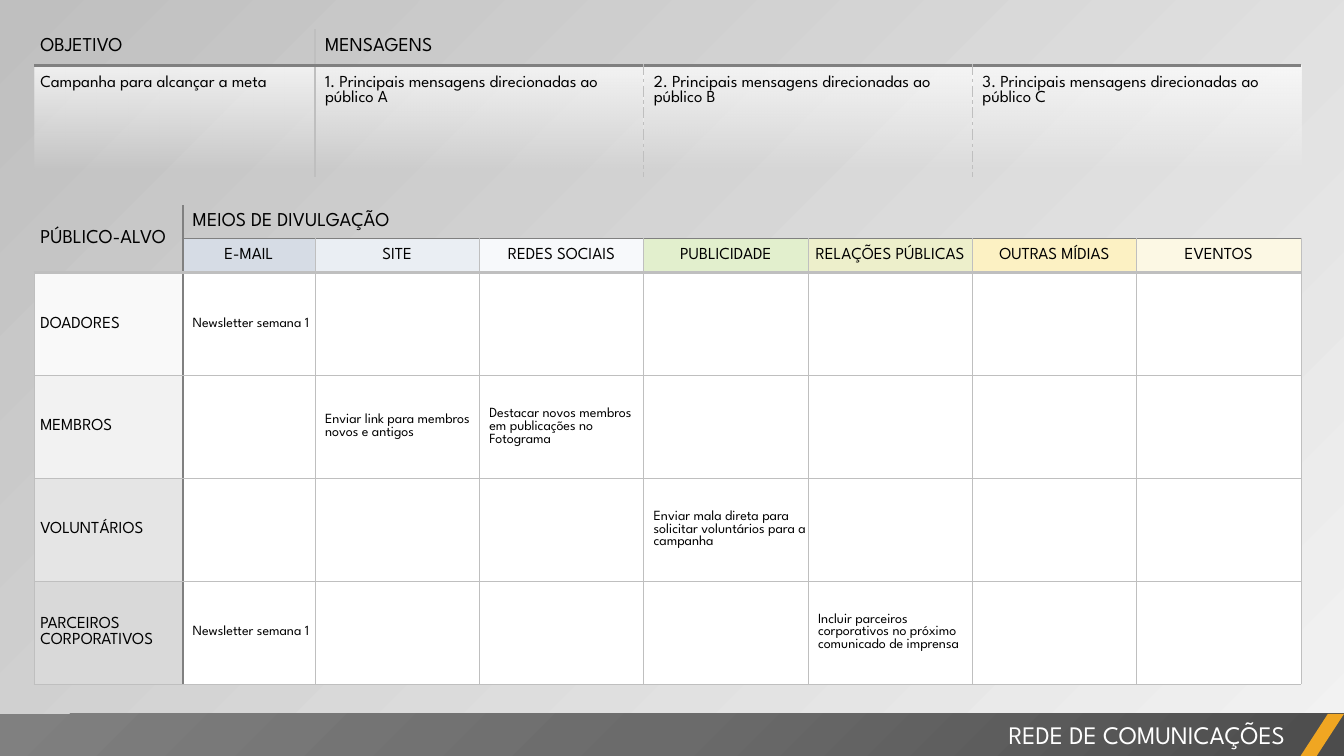
"""Build a one-slide communications planning grid."""
from lxml import etree
from pptx import Presentation
from pptx.dml.color import RGBColor
from pptx.enum import shapes, text
from pptx.oxml import ns
from pptx.util import Pt

FONT = "League Spartan"
BLACK = RGBColor(0x00, 0x00, 0x00)
WHITE = RGBColor(0xFF, 0xFF, 0xFF)
PALE = RGBColor(0xF2, 0xF2, 0xF2)
SILVER = RGBColor(0xBF, 0xBF, 0xBF)
GREY = RGBColor(0x80, 0x80, 0x80)
IRON = RGBColor(0x6B, 0x6B, 0x6B)
CHARCOAL = RGBColor(0x4C, 0x4C, 0x4C)
AMBER = RGBColor(0xF0, 0xA6, 0x22)

CHANNELS = [
    ("E-MAIL", RGBColor(0xD6, 0xDC, 0xE5)),
    ("SITE", RGBColor(0xEA, 0xEE, 0xF3)),
    ("REDES SOCIAIS", RGBColor(0xF7, 0xF9, 0xFB)),
    ("PUBLICIDADE", RGBColor(0xE2, 0xEF, 0xCD)),
    ("RELAÇÕES PÚBLICAS", RGBColor(0xED, 0xEF, 0xCB)),
    ("OUTRAS MÍDIAS", RGBColor(0xFC, 0xF1, 0xC3)),
    ("EVENTOS", RGBColor(0xFC, 0xF8, 0xE4)),
]
AUDIENCES = [
    ("DOADORES", RGBColor(0xF9, 0xF9, 0xF9), {1: "Newsletter semana 1"}),
    ("MEMBROS", PALE, {
        2: "Enviar link para membros novos e antigos",
        3: "Destacar novos membros em publicações no Fotograma"}),
    ("VOLUNTÁRIOS", RGBColor(0xE5, 0xE5, 0xE5), {
        4: "Enviar mala direta para solicitar voluntários para a campanha"}),
    ("PARCEIROS CORPORATIVOS", RGBColor(0xD9, 0xD9, 0xD9), {
        1: "Newsletter semana 1",
        5: "Incluir parceiros corporativos no próximo comunicado de imprensa"}),
]
BRIEF = [
    "Campanha para alcançar a meta",
    "1. Principais mensagens direcionadas ao público A",
    "2. Principais mensagens direcionadas ao público B",
    "3. Principais mensagens direcionadas ao público C",
]


def write(frame, words, size=12, color=BLACK, align=text.PP_ALIGN.LEFT,
          anchor=text.MSO_ANCHOR.MIDDLE, left=7.2, top=0):
    frame.margin_left, frame.margin_top = Pt(left), Pt(top)
    frame.vertical_anchor = anchor
    paragraph = getattr(frame, "text_frame", frame).paragraphs[0]
    paragraph.alignment = align
    run = paragraph.add_run()
    run.text = words
    run.font.name = FONT
    run.font.size = Pt(size)
    run.font.color.rgb = color


def fade(fill, element, stops, direction):
    fill.gradient()
    steps = "".join(
        f'<a:gs pos="{place * 1000}"><a:srgbClr val="{color}">'
        f'<a:alpha val="{opacity * 1000}"/></a:srgbClr></a:gs>'
        for place, color, opacity in stops)
    plain = element.find(".//" + ns.qn("a:gradFill"))
    plain.getparent().replace(plain, etree.fromstring(
        f'<a:gradFill {ns.nsdecls("a")} rotWithShape="1">'
        f"<a:gsLst>{steps}</a:gsLst>{direction}</a:gradFill>"))


deck = Presentation()
deck.slide_width, deck.slide_height = Pt(960), Pt(540)
slide = deck.slides.add_slide(deck.slide_layouts[6])
fade(slide.background.fill, slide.element, [(0, PALE, 40), (100, SILVER, 100)],
     '<a:lin ang="13500000" scaled="0"/>')

thin, heavy = (SILVER, 0.5, "solid"), (SILVER, 2.25, "solid")
axis, ledge = (GREY, 1.5, "solid"), (GREY, 1, "solid")
rule, dashed = (GREY, 2.25, "solid"), (SILVER, 1, "sysDashDot")
layouts = [
    (146.5, [106, 94.5] + [117.4] * 6, [23.9, 24.3] + [73.5] * 4,
     [[None, axis] + [None] * 7, [None, axis] + [thin] * 7]
     + [[thin, axis] + [thin] * 7] * 4,
     [[None] * 8, [None] + [ledge] * 7, [heavy] * 8] + [[thin] * 8] * 4),
    (20.9, [200.5] + [234.8] * 3, [25.7, 80],
     [[None, heavy, None, None, None], [None, heavy, dashed, dashed, None]],
     [[None] * 4, [rule] * 4, [None] * 4]),
]
grids = []
for top, widths, heights, uprights, levels in layouts:
    frame = slide.shapes.add_table(len(heights), len(widths), Pt(24.5), Pt(top),
                                   Pt(sum(widths)), Pt(sum(heights)))
    grid = frame.table
    grid.first_row = grid.horz_banding = False
    for column, width in zip(grid.columns, widths):
        column.width = Pt(width)
    for row, height in zip(grid.rows, heights):
        row.height = Pt(height)
    for r in range(len(heights)):
        for c in range(len(widths)):
            cell = grid.cell(r, c)
            cell.margin_left = cell.margin_right = 0
            cell.margin_top = cell.margin_bottom = 0
            cell.fill.background()
            edges = {"lnL": uprights[r][c], "lnR": uprights[r][c + 1],
                     "lnT": levels[r][c], "lnB": levels[r + 1][c]}
            for place, (tag, edge) in enumerate(edges.items()):
                color, width, dash = edge or (None, 0, "solid")
                paint = (f'<a:solidFill><a:srgbClr val="{color}"/></a:solidFill>'
                         f'<a:prstDash val="{dash}"/>' if edge else "<a:noFill/>")
                cell._tc.tcPr.insert(place, etree.fromstring(
                    f'<a:{tag} {ns.nsdecls("a")} w="{Pt(width)}">{paint}</a:{tag}>'))
    grids.append(grid)

planner, brief = grids
planner.cell(0, 0).merge(planner.cell(1, 0))
planner.cell(0, 1).merge(planner.cell(0, 7))
brief.cell(0, 1).merge(brief.cell(0, 3))
write(planner.cell(0, 0), "PÚBLICO-ALVO", size=14, left=4.3)
write(planner.cell(0, 1), "MEIOS DE DIVULGAÇÃO", size=14)
write(brief.cell(0, 0), "OBJETIVO", size=14, left=4.3)
write(brief.cell(0, 1), "MENSAGENS", size=14)

for c, (channel, tint) in enumerate(CHANNELS, 1):
    cell = planner.cell(1, c)
    cell.fill.solid()
    cell.fill.fore_color.rgb = tint
    write(cell, channel, align=text.PP_ALIGN.CENTER, left=0)

for r, (audience, tint, actions) in enumerate(AUDIENCES, 2):
    write(planner.cell(r, 0), audience, left=4.3)
    for c in range(8):
        cell = planner.cell(r, c)
        cell.fill.solid()
        cell.fill.fore_color.rgb = WHITE if c else tint
        if c in actions:
            write(cell, actions[c], size=10)

for c, message in enumerate(BRIEF):
    cell = brief.cell(1, c)
    fade(cell.fill, cell._tc, [(0, WHITE, 75), (93, WHITE, 0)],
         '<a:lin ang="5400000" scaled="0"/>')
    write(cell, message, anchor=text.MSO_ANCHOR.TOP, left=7.2 if c else 4.3, top=7.2)

footer = slide.shapes.add_shape(
    shapes.MSO_SHAPE.RECTANGLE, Pt(0), Pt(510), Pt(960), Pt(30))
fade(footer.fill, footer.element,
     [(0, CHARCOAL, 100), (50, IRON, 100), (100, GREY, 100)],
     '<a:path path="circle"><a:fillToRect l="100000" t="100000"/></a:path>')
accent = slide.shapes.add_shape(
    shapes.MSO_SHAPE.PARALLELOGRAM, Pt(929), Pt(510), Pt(31), Pt(30))
accent.adjustments[0] = 0.65
accent.fill.solid()
accent.fill.fore_color.rgb = AMBER
for band in (footer, accent):
    band.line.fill.background()
    band.shadow.inherit = False

title = slide.shapes.add_textbox(Pt(378), Pt(510), Pt(547), Pt(29)).text_frame
title.word_wrap = True
title.auto_size = text.MSO_AUTO_SIZE.SHAPE_TO_FIT_TEXT
write(title, "REDE DE COMUNICAÇÕES", size=18, color=WHITE,
      align=text.PP_ALIGN.RIGHT, anchor=text.MSO_ANCHOR.TOP, top=3.6)

deck.save("out.pptx")
